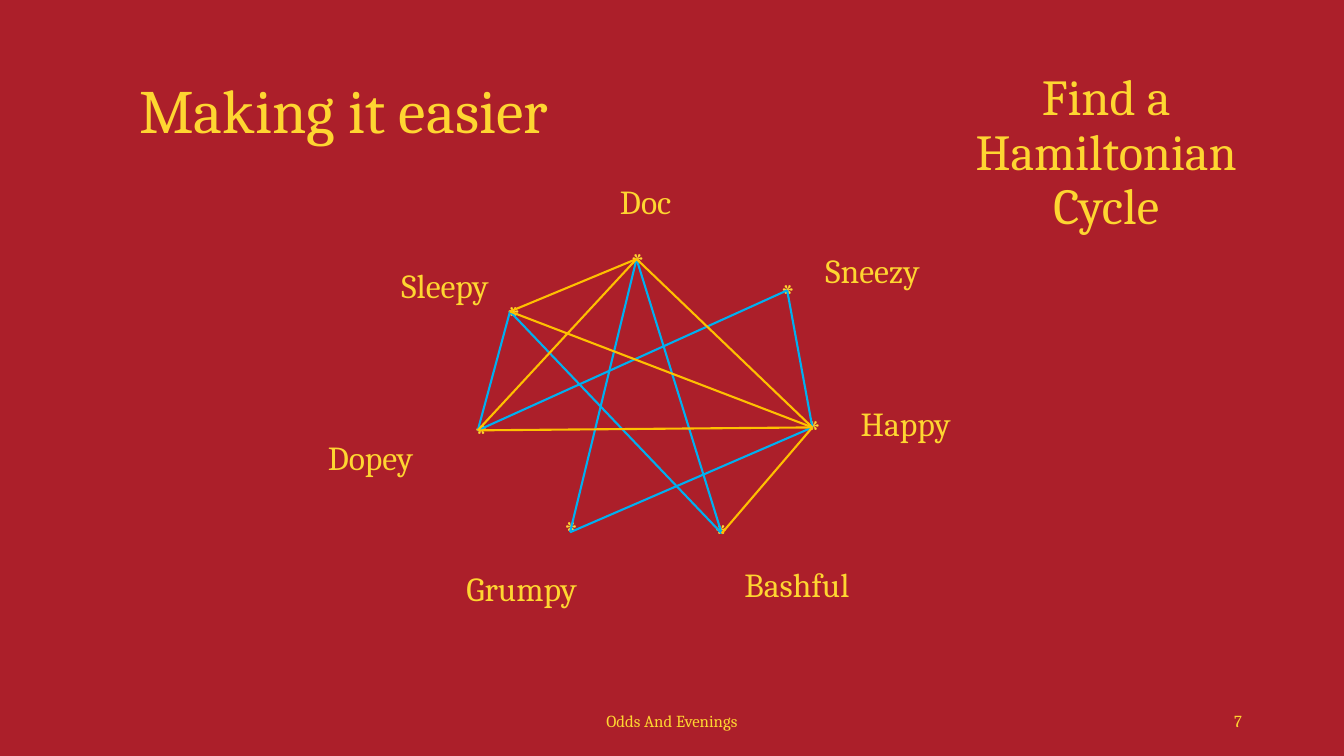
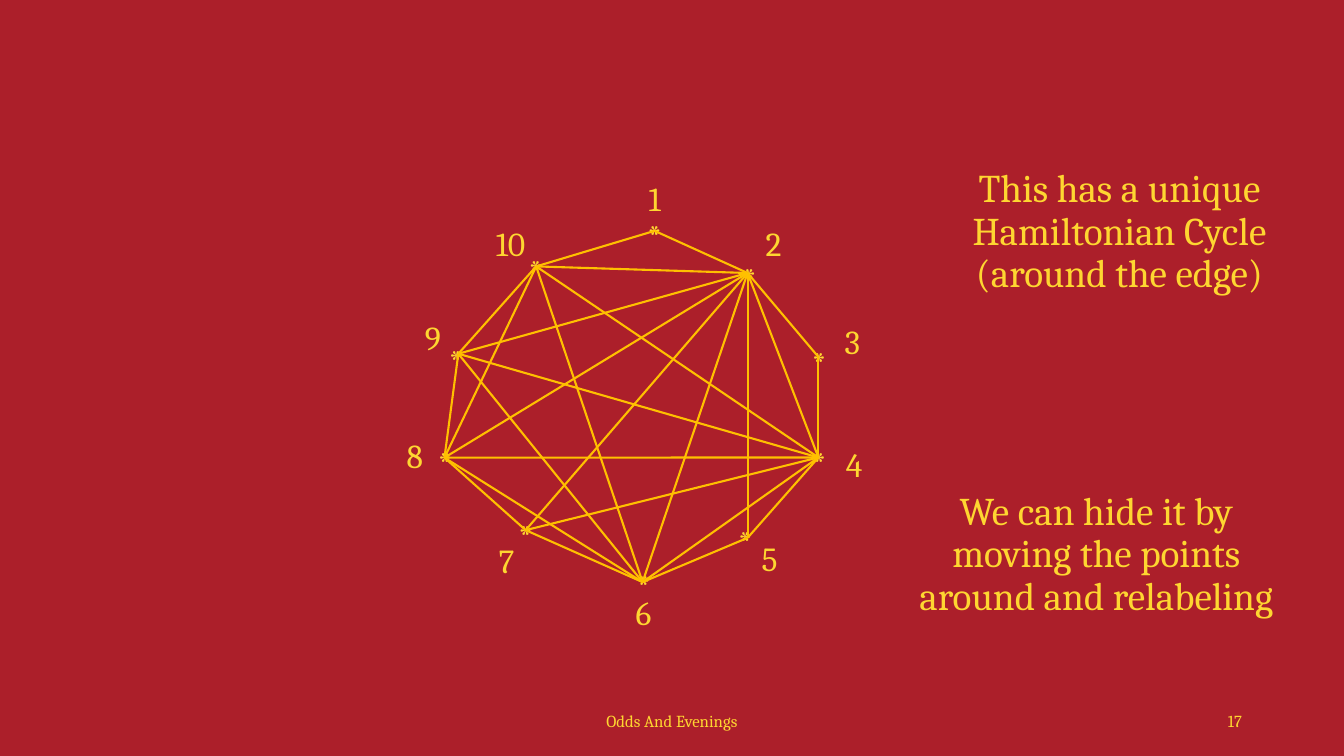
"""Build two slides that show graphs with Hamiltonian cycles."""
from dataclasses import dataclass

from lxml import etree
from pptx import Presentation
from pptx.dml.color import RGBColor
from pptx.enum.shapes import MSO_CONNECTOR
from pptx.enum.text import MSO_ANCHOR, PP_ALIGN
from pptx.oxml.ns import qn
from pptx.util import Pt

LEFT, MID, RIGHT = PP_ALIGN.LEFT, PP_ALIGN.CENTER, PP_ALIGN.RIGHT
MIDDLE = MSO_ANCHOR.MIDDLE
STRAIGHT = MSO_CONNECTOR.STRAIGHT


@dataclass(frozen=True)
class Theme:
    """Colours and type sizes."""
    back: RGBColor = RGBColor.from_string("AC1F2A")
    text: RGBColor = RGBColor.from_string("FED631")
    gold: RGBColor = RGBColor.from_string("FFC000")
    blue: RGBColor = RGBColor.from_string("00B0F0")
    font: str = "Cambria"
    title: int = 44
    task: int = 36
    note: int = 28
    label: int = 24
    foot: int = 12
    line: float = 1.5


theme = Theme()


def write(slide, text, mid, size, wide=108, high=104, align=MID, space=0.9):
    """Put text in a box centred on the point mid."""
    x, y = mid
    box = slide.shapes.add_textbox(
        Pt(x - wide / 2), Pt(y - high / 2), Pt(wide), Pt(high))
    frame = box.text_frame
    frame.word_wrap = True
    frame.vertical_anchor = MIDDLE
    frame.text = text
    for para in frame.paragraphs:
        para.alignment = align
        para.line_spacing = space
        para.font.name = theme.font
        para.font.size = Pt(size)
        para.font.color.rgb = theme.text


def join(slide, start, end, color):
    """Draw one edge of a graph."""
    edge = slide.shapes.add_connector(STRAIGHT, *map(Pt, start + end))
    edge.line.color.rgb = color
    edge.line.width = Pt(theme.line)
    etree.SubElement(edge._element.spPr, qn("a:effectLst"))


# Each node holds the centre of its label, the centre of its star and the edge end.
dwarfs = {
    "Sneezy": ((623.2, 194.8), (562.7, 212), (562.3, 207.4)),
    "Doc": ((461.2, 145.1), (455.4, 189.7), (454.7, 185)),
    "Dopey": ((264.6, 328), (343.8, 312.1), (341.3, 307.4)),
    "Bashful": ((569.2, 418.7), (515.2, 383.4), (515.5, 381)),
    "Happy": ((646.9, 304.2), (581.4, 309.2), (580.3, 305.3)),
    "Grumpy": ((372.6, 421.6), (407.9, 381.2), (407.2, 380.2)),
    "Sleepy": ((317.9, 205.6), (366.8, 227.2), (364.3, 222.5)),
}
pairs = [
    (theme.blue, {
        "Doc": ["Grumpy", "Bashful"],
        "Sleepy": ["Dopey", "Bashful"],
        "Sneezy": ["Dopey", "Happy"],
        "Happy": ["Grumpy"],
    }),
    (theme.gold, {
        "Doc": ["Sleepy", "Dopey", "Happy"],
        "Happy": ["Sleepy", "Dopey", "Bashful"],
    }),
]
points = {
    1: ((467.6, 142.9), (467.6, 169.6), (467.6, 164.9)),
    2: ((552.6, 175.3), (535.3, 200.5), (534, 195)),
    3: ((608.8, 245.2), (585, 260.3), (584.6, 255)),
    4: ((610.2, 333), (585, 331.6), (584.6, 326.8)),
    5: ((549.7, 400.7), (532.4, 388.4), (534, 384.2)),
    6: ((459.7, 438.8), (459.7, 419.4), (459, 415.8)),
    7: ((361.8, 402.1), (375.5, 384.1), (375.5, 378.7)),
    8: ((296.3, 327.2), (317.9, 331.6), (317.5, 326.9)),
    9: ((309.2, 242.3), (325.8, 258.8), (327.4, 252.7)),
    10: ((364.7, 175.3), (382.7, 194.8), (383, 190.3)),
}
links = [
    (theme.gold, {
        1: [2, 10],
        2: [3, 4, 5, 6, 7, 8, 9, 10],
        3: [4],
        4: [5, 6, 7, 8, 9, 10],
        5: [6],
        6: [7, 8, 9, 10],
        7: [8],
        8: [9, 10],
        9: [10],
    }),
]

deck = Presentation()
deck.slide_width, deck.slide_height = Pt(960), Pt(540)
fill = deck.slide_master.background.fill
fill.solid()
fill.fore_color.rgb = theme.back

slides = []
for page, nodes, groups in [("7", dwarfs, pairs), ("17", points, links)]:
    slide = deck.slides.add_slide(deck.slide_layouts[6])
    slides.append(slide)
    write(slide, "Odds And Evenings", (480, 514.8), theme.foot, 324, 28.8, space=1)
    write(slide, page, (786.2, 514.8), theme.foot, 216, 28.8, RIGHT, 1)
    for name, (label, star, end) in nodes.items():
        write(slide, str(name), label, theme.label)
        write(slide, "*", star, theme.label)
    for color, edges in groups:
        for start, ends in edges.items():
            for end in ends:
                join(slide, nodes[start][2], nodes[end][2], color)

easy, hide = slides
write(easy, "Making it easier", (256.3, 81), theme.title, 328, align=LEFT)
write(easy, "Find a Hamiltonian Cycle", (790.2, 109.8), theme.task, 224)
write(hide, "This has a unique\nHamiltonian Cycle\n(around the edge)",
      (799.6, 166), theme.note, 300)
write(hide, "We can hide it by\nmoving the points\naround and relabeling",
      (783, 396.4), theme.note, 300)

deck.save("out.pptx")
